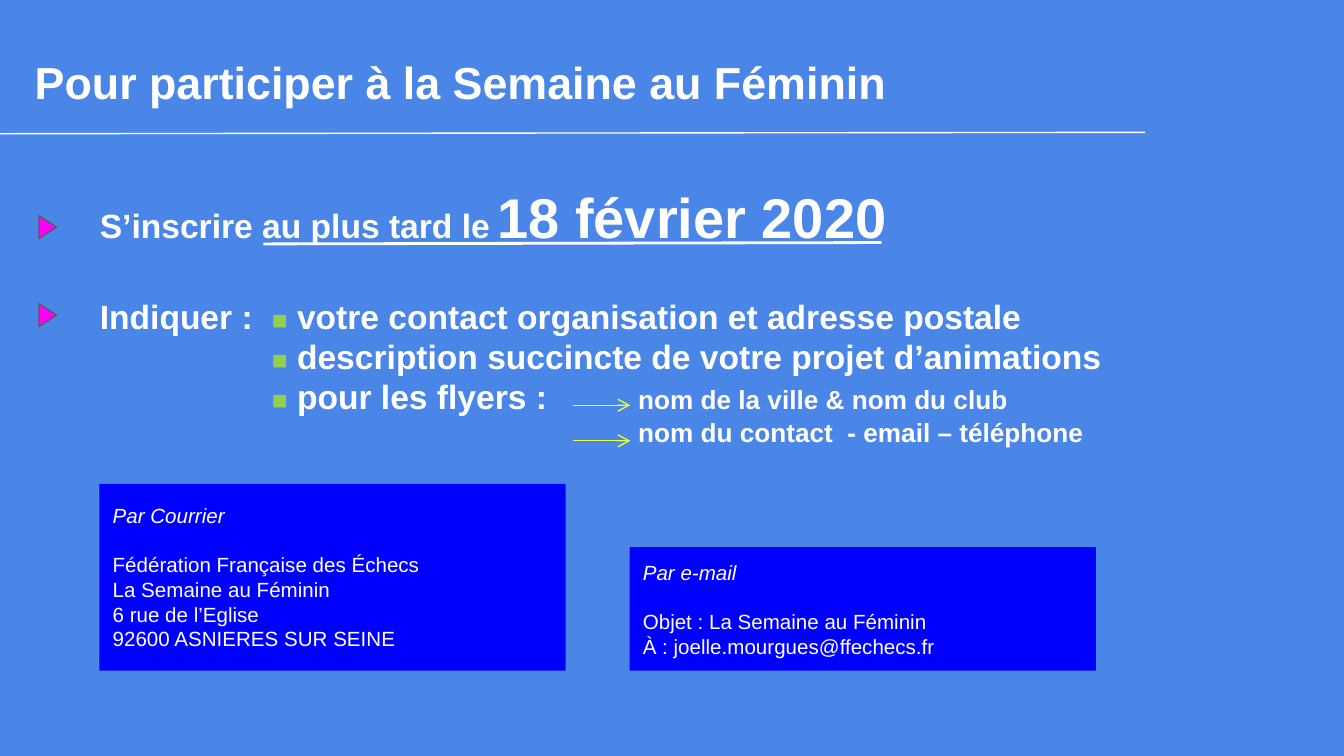
from lxml import etree
from pptx import Presentation
from pptx import util as u
from pptx.dml.color import RGBColor
from pptx.enum import shapes, text
from pptx.oxml.ns import qn

PX = 4572  # EMU: 200 px to the inch
WHITE = RGBColor(0xFF, 0xFF, 0xFF)
SKY = RGBColor(0x4A, 0x86, 0xE8)
BLUE = RGBColor(0x00, 0x00, 0xFF)
PINK = RGBColor(0xFF, 0x00, 0xFF)
GREY = RGBColor(0x59, 0x59, 0x59)
GREEN = RGBColor(0x92, 0xD0, 0x50)
YELLOW = RGBColor(0xED, 0xFE, 0x3B)
BULLET = ("■", 14, GREEN)


class Page:
    font = "Arial"
    inset = 20

    def __init__(self, prs):
        self.s = prs.slides.add_slide(prs.slide_layouts[6])
        self.s.background.fill.solid()
        self.s.background.fill.fore_color.rgb = SKY

    def frame(self, sp, anchor=text.MSO_ANCHOR.TOP):
        tf = sp.text_frame
        tf.word_wrap = True
        tf.vertical_anchor = anchor
        tf.margin_left = tf.margin_right = self.inset * PX
        tf.margin_top = tf.margin_bottom = self.inset * PX
        return tf

    def paragraph(self, tf, runs, size, bold=False, italic=False):
        """Add a paragraph; a run is a string or (string, size, colour)."""
        first = tf.paragraphs[0]
        p = first if not first.runs else tf.add_paragraph()
        p.alignment = text.PP_ALIGN.LEFT
        p.font.name, p.font.size = self.font, u.Pt(size)
        p.font.bold, p.font.italic = bold, italic
        p.font.color.rgb = WHITE
        for run in runs:
            words, run_size, colour = (run, size, WHITE) if isinstance(run, str) else run
            r = p.add_run()
            r.text = words
            r.font.size = u.Pt(run_size)
            r.font.color.rgb = colour
        return p

    def text_box(self, x, y, w, h):
        return self.frame(self.s.shapes.add_textbox(x * PX, y * PX, w * PX, h * PX))

    def tabs(self, p, *stops):
        pPr = p._p.get_or_add_pPr()
        tab_list = etree.Element(qn("a:tabLst"))
        for stop in stops:
            etree.SubElement(tab_list, qn("a:tab"), pos=str(stop * PX), algn="l")
        pPr.find(qn("a:defRPr")).addprevious(tab_list)

    def shape(self, kind, x, y, w, h, fill):
        sp = self.s.shapes.add_shape(kind, x * PX, y * PX, w * PX, h * PX)
        sp.shadow.inherit = False
        sp.fill.solid()
        sp.fill.fore_color.rgb = fill
        sp.line.fill.background()
        return sp

    def marker(self, x, y):
        sp = self.shape(shapes.MSO_SHAPE.ISOSCELES_TRIANGLE, x, y, 34, 26, PINK)
        sp.rotation = 90
        sp.line.color.rgb = GREY
        sp.line.width = u.Pt(0.75)

    def card(self, x, y, w, h, heading, lines, anchor):
        sp = self.shape(shapes.MSO_SHAPE.RECTANGLE, x, y, w, h, BLUE)
        tf = self.frame(sp, anchor)
        p = self.paragraph(tf, [heading], 11, italic=True)
        p.space_after = u.Pt(13)
        for line in lines:
            self.paragraph(tf, [line], 11)

    def line(self, x1, y1, x2, y2, colour=WHITE, width=0.75, arrow=False):
        c = self.s.shapes.add_connector(
            shapes.MSO_CONNECTOR.STRAIGHT, x1 * PX, y1 * PX, x2 * PX, y2 * PX)
        c.line.color.rgb = colour
        c.line.width = u.Pt(width)
        if arrow:
            etree.SubElement(c.line._get_or_add_ln(), qn("a:tailEnd"), type="arrow")
        etree.SubElement(c._element.spPr, qn("a:effectLst"))


def main():
    prs = Presentation()
    prs.slide_width, prs.slide_height = 2000 * PX, 1125 * PX
    page = Page(prs)

    title = page.text_box(32, 62, 1884, 122)
    page.paragraph(title, ["Pour participer à la Semaine au Féminin"], 24, bold=True)
    page.line(0, 199, 1704, 197)

    for y in (325, 456):
        page.marker(54, y)

    deadline = page.text_box(129, 252, 1508, 122)
    page.paragraph(deadline, ["S’inscrire au plus tard le", (" ", 14, WHITE),
                              ("18 février 2020", 30, WHITE)], 18, bold=True)
    page.line(392, 363, 1312, 361, width=1.5)

    details = page.text_box(129, 420, 1564, 274)
    bullet_x, flyer_x = 256, 801
    rows = [
        ["Indiquer :\t", BULLET, " votre contact organisation et adresse postale"],
        ["\t", BULLET, " description succincte de votre projet d’animations"],
        ["\t", BULLET, " pour les flyers :\t", ("nom de la ville & nom du club", 14, WHITE)],
    ]
    for runs in rows:
        page.tabs(page.paragraph(details, runs, 18, bold=True), bullet_x, flyer_x)
    contact = page.paragraph(details, ["\tnom du contact  - email – téléphone"], 14, bold=True)
    page.tabs(contact, flyer_x)

    page.card(148, 720, 694, 278, "Par Courrier",
              ["Fédération Française des Échecs", "La Semaine au Féminin",
               "6 rue de l’Eglise", "92600 ASNIERES SUR SEINE"], text.MSO_ANCHOR.MIDDLE)
    page.card(937, 814, 694, 184, "Par e-mail",
              ["Objet : La Semaine au Féminin", "À : joelle.mourgues@ffechecs.fr"],
              text.MSO_ANCHOR.TOP)

    for y in (603, 656):
        page.line(852, y, 938, y, YELLOW, arrow=True)

    prs.save("out.pptx")


if __name__ == "__main__":
    main()
